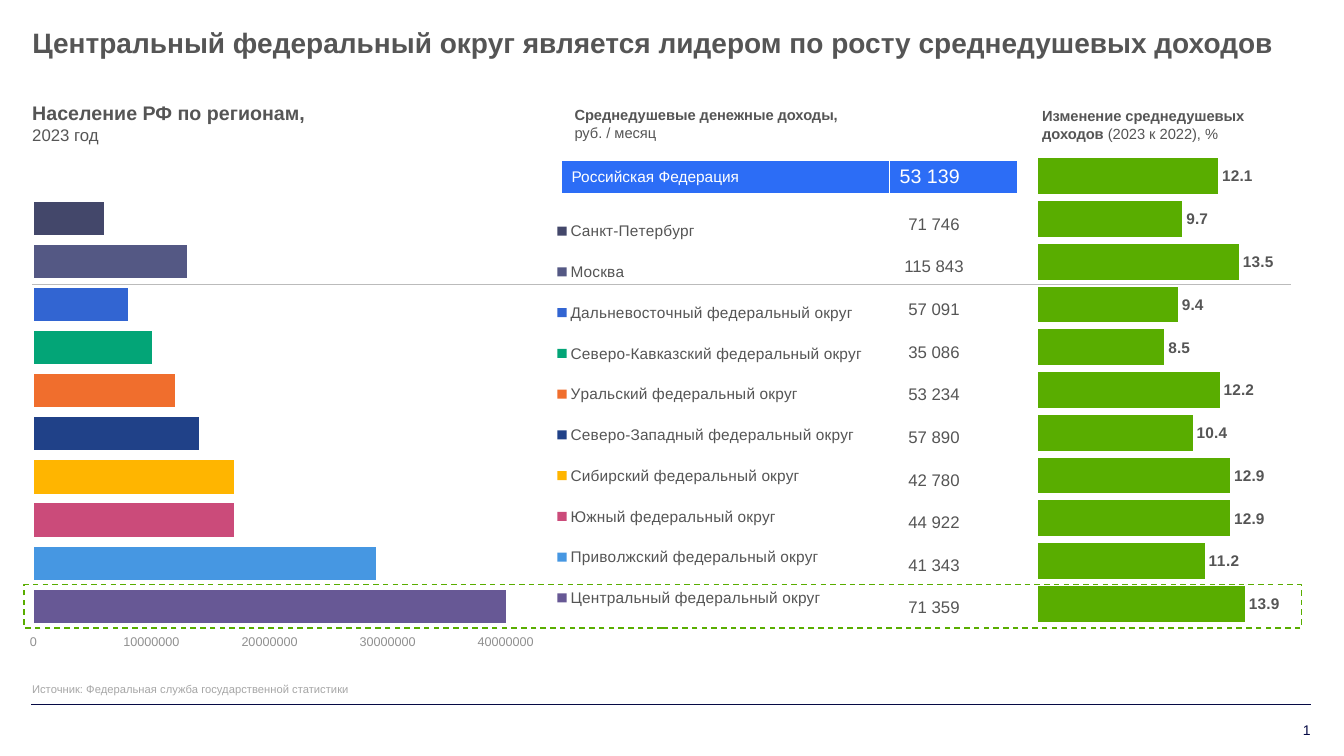
from lxml import etree
from pptx import Presentation, util as u
from pptx.chart.data import CategoryChartData
from pptx.dml.color import RGBColor
from pptx.enum import chart as charts, dml, shapes, text
from pptx.oxml.ns import qn

WIDTH, HEIGHT = u.Inches(13.33), u.Inches(7.5)
GREY, NAVY, GREEN, BLUE, WHITE = "555555", "060A45", "59AD00", "2C6DF6", "FFFFFF"

# Region, population, bar colour, income, income growth: bottom row first
REGIONS = [
    ("Центральный федеральный округ", 40000000, "675895", "71 359", 13.9),
    ("Приволжский федеральный округ", 29000000, "4697E2", "41 343", 11.2),
    ("Южный федеральный округ", 17000000, "CB4B7A", "44 922", 12.9),
    ("Сибирский федеральный округ", 17000000, "FFB500", "42 780", 12.9),
    ("Северо-Западный федеральный округ", 14000000, "204188", "57 890", 10.4),
    ("Уральский федеральный округ", 12000000, "F06E2D", "53 234", 12.2),
    ("Северо-Кавказский федеральный округ", 10000000, "03A577", "35 086", 8.5),
    ("Дальневосточный федеральный округ", 8000000, "3265D2", "57 091", 9.4),
    ("Москва", 13000000, "545884", "115 843", 13.5),
    ("Санкт-Петербург", 6000000, "43476A", "71 746", 9.7),
]
NATIONAL = ("Российская Федерация", "53 139", 12.1)


def place(left, top, width, height):
    """Turn percentages of the slide's size into lengths."""
    return (int(WIDTH * left / 100), int(HEIGHT * top / 100),
            int(WIDTH * width / 100), int(HEIGHT * height / 100))


def rgb(color):
    return RGBColor.from_string(color)


def apply(target, **values):
    for name, value in values.items():
        setattr(target, name, value)


def style_font(font, size, color=GREY, bold=False):
    apply(font, name="Arial", size=u.Pt(size), bold=bold)
    font.color.rgb = rgb(color)


def write(paragraph, words, size, color=GREY, bold=False):
    run = paragraph.add_run()
    run.text = words
    style_font(run.font, size, color, bold)


def text_frame(slide, box, side=0, wrap=True):
    frame = slide.shapes.add_textbox(*place(*box)).text_frame
    apply(frame, word_wrap=wrap, margin_left=u.Inches(side), margin_right=u.Inches(side))
    return frame


def heading(slide, box, bold_words, plain_words, sizes=(10.5, 10.5), own_line=False):
    paragraph = text_frame(slide, box, wrap=not own_line).paragraphs[0]
    paragraph.space_after = u.Pt(6)
    write(paragraph, bold_words, sizes[0], bold=True)
    if own_line:
        paragraph.add_line_break()
    write(paragraph, plain_words, sizes[1])


def rule(slide, left, right, y, color):
    x1, height, x2, _ = place(left, y, right, 0)
    line = slide.shapes.add_connector(shapes.MSO_CONNECTOR.STRAIGHT, x1, height, x2, height)
    line.line.color.rgb = rgb(color)
    line.line.width = u.Pt(1)
    etree.SubElement(line._element.spPr, qn("a:effectLst"))


def set_layout(parent, index, box, inner=False):
    """Fix a chart part at shares of the chart's size."""
    for old in parent.findall(qn("c:layout")):
        parent.remove(old)
    layout = etree.Element(qn("c:layout"))
    manual = etree.SubElement(layout, qn("c:manualLayout"))
    settings = [("layoutTarget", "inner")] if inner else []
    settings += [("xMode", "edge"), ("yMode", "edge"), *zip("xywh", box)]
    for tag, value in settings:
        etree.SubElement(manual, qn(f"c:{tag}")).set("val", str(value))
    parent.insert(index, layout)


def bar_chart(slide, box, categories, series, colors, top_value, plot_area, gap, overlap=0):
    data = CategoryChartData()
    data.categories = categories
    for name, values in series:
        data.add_series(name, values)
    chart = slide.shapes.add_chart(
        charts.XL_CHART_TYPE.BAR_CLUSTERED, *place(*box), data).chart
    apply(chart, has_title=False, has_legend=False)
    style_font(chart.font, 10)
    chart.category_axis.visible = False
    apply(chart.value_axis, minimum_scale=0, maximum_scale=top_value,
          has_major_gridlines=False, major_tick_mark=charts.XL_TICK_MARK.NONE)
    plot = chart.plots[0]
    apply(plot, gap_width=gap, overlap=overlap, vary_by_categories=False)
    for bars, color in zip(plot.series, colors):
        bars.format.fill.solid()
        bars.format.fill.fore_color.rgb = rgb(color)
        bars.invert_if_negative = False
    set_layout(chart._chartSpace.chart.plotArea, 0, plot_area, inner=True)
    return chart


def table(slide, box, rows, shares):
    left, top, width, height = place(*box)
    grid = slide.shapes.add_table(len(rows), len(shares), left, top, width, height).table
    apply(grid, first_row=False, horz_banding=False)
    for column, share in zip(grid.columns, shares):
        column.width = int(width * share)
    for r, row in enumerate(rows):
        for c, (words, size, color, fill) in enumerate(row):
            cell = grid.cell(r, c)
            cell.vertical_anchor = text.MSO_ANCHOR.MIDDLE
            write(cell.text_frame.paragraphs[0], words, size, color)
            if fill:
                cell.fill.solid()
                cell.fill.fore_color.rgb = rgb(fill)
            else:
                cell.fill.background()
    return grid


def title(slide, box):
    holder = slide.shapes.title
    apply(holder, **dict(zip(("left", "top", "width", "height"), place(*box))))
    frame = holder.text_frame
    apply(frame, margin_left=0, margin_right=0, word_wrap=True,
          vertical_anchor=text.MSO_ANCHOR.TOP, auto_size=text.MSO_AUTO_SIZE.NONE)
    frame.paragraphs[0].alignment = text.PP_ALIGN.LEFT
    write(frame.paragraphs[0],
          "Центральный федеральный округ является лидером по росту среднедушевых доходов",
          20, bold=True)


def population(slide, box):
    left, top, width, height = box
    chart = bar_chart(slide, (left, top + 1.86, width, height - 1.86), ["1"],
                      [(name, [people]) for name, people, *_ in REGIONS],
                      [region[2] for region in REGIONS], 41000000,
                      (0.013, 0.15, 0.513, 0.782), gap=50, overlap=-30)
    axis = chart.value_axis
    axis.major_unit = 10000000
    axis.format.line.fill.background()
    style_font(axis.tick_labels.font, 9, "909090")
    apply(axis.tick_labels, number_format="General", number_format_is_linked=False)
    chart.has_legend = True
    legend = chart.legend
    apply(legend, position=charts.XL_LEGEND_POSITION.RIGHT, include_in_layout=False)
    style_font(legend.font, 11)
    set_layout(legend._element, 1, (0.56, 0.16, 0.34, 0.77))
    heading(slide, (left + 0.82, top, 32.6, 5.73), "Население РФ по регионам,", "2023 год",
            (14, 12), own_line=True)


def income(slide, box):
    left, top, width, height = box
    heading(slide, (left + 0.97, top, 21.5, 7.07),
            "Среднедушевые денежные доходы, ", "руб. / месяц")
    table(slide, (left, top + 7.87, width, 4.4),
          [[(NATIONAL[0], 11, WHITE, BLUE), (NATIONAL[1], 14, WHITE, BLUE)]], (0.72, 0.28))
    rows = [[(region[3], 12, GREY, None)] for region in reversed(REGIONS)]
    grid = table(slide, (left + 23.55, top + 13.47, 8.33, height - 13.47), rows, (1,))
    for cell in grid.iter_cells():
        edge = u.Inches(0.01)
        apply(cell, margin_left=edge, margin_right=edge, margin_top=edge, margin_bottom=0)
        cell.text_frame.paragraphs[0].alignment = text.PP_ALIGN.CENTER


def growth(slide, box):
    left, top, width, height = box
    heading(slide, (left + 1.5, top, 15.53, 9.47),
            "Изменение среднедушевых доходов ", "(2023 к 2022), %")
    values = [region[4] for region in REGIONS] + [NATIONAL[2]]
    chart = bar_chart(slide, (left, top + 4.27, width, height - 4.27),
                      [str(n + 1) for n in range(len(values))], [("Series 1", values)],
                      [GREEN], 17, (0.058, 0.041, 0.942, 0.926), gap=20)
    chart.value_axis.visible = False
    labels = chart.plots[0].series[0].data_labels
    apply(labels, show_value=True, number_format="#,##0.0", number_format_is_linked=False,
          position=charts.XL_LABEL_POSITION.OUTSIDE_END)
    style_font(labels.font, 11, bold=True)


def highlight(slide, box):
    frame = slide.shapes.add_shape(shapes.MSO_SHAPE.RECTANGLE, *place(*box))
    frame.shadow.inherit = False
    frame.fill.background()
    frame.line.color.rgb = rgb(GREEN)
    apply(frame.line, width=u.Pt(1), dash_style=dml.MSO_LINE.DASH)


def footer(slide, box):
    left, top, width, height = box
    source = text_frame(slide, (left - 0.68, top, 50.63, 3.2), side=0.1)
    write(source.paragraphs[0], "Источник: Федеральная служба государственной статистики",
          8, "A6A6A6")
    rule(slide, left, left + width, top + 3.6, NAVY)
    number = text_frame(slide, (left + width - 7.5, top + 4.27, 7.43, height - 4.27))
    number.vertical_anchor = text.MSO_ANCHOR.MIDDLE
    paragraph = number.paragraphs[0]
    paragraph.alignment = text.PP_ALIGN.RIGHT
    write(paragraph, "2", 10, NAVY)
    field = paragraph.runs[0]._r
    field.tag = qn("a:fld")
    field.set("id", "{B6F15528-21DE-4FAA-801E-634DDDAF4B2B}")
    field.set("type", "slidenum")


def main():
    deck = Presentation()
    apply(deck, slide_width=WIDTH, slide_height=HEIGHT)
    slide = deck.slides.add_slide(deck.slide_layouts[5])
    title(slide, (2.4, 2.67, 95.03, 8.13))
    population(slide, (1.58, 12.67, 70.2, 75.86))
    income(slide, (41.78, 13.33, 33.9, 69.87))
    rule(slide, 2.4, 96.08, 37.6, "BBBBBB")
    growth(slide, (76.05, 13.47, 20.03, 71.46))
    highlight(slide, (1.8, 77.33, 95.03, 5.73))
    footer(slide, (2.33, 89.6, 95.25, 9.6))
    deck.save("out.pptx")


if __name__ == "__main__":
    main()
